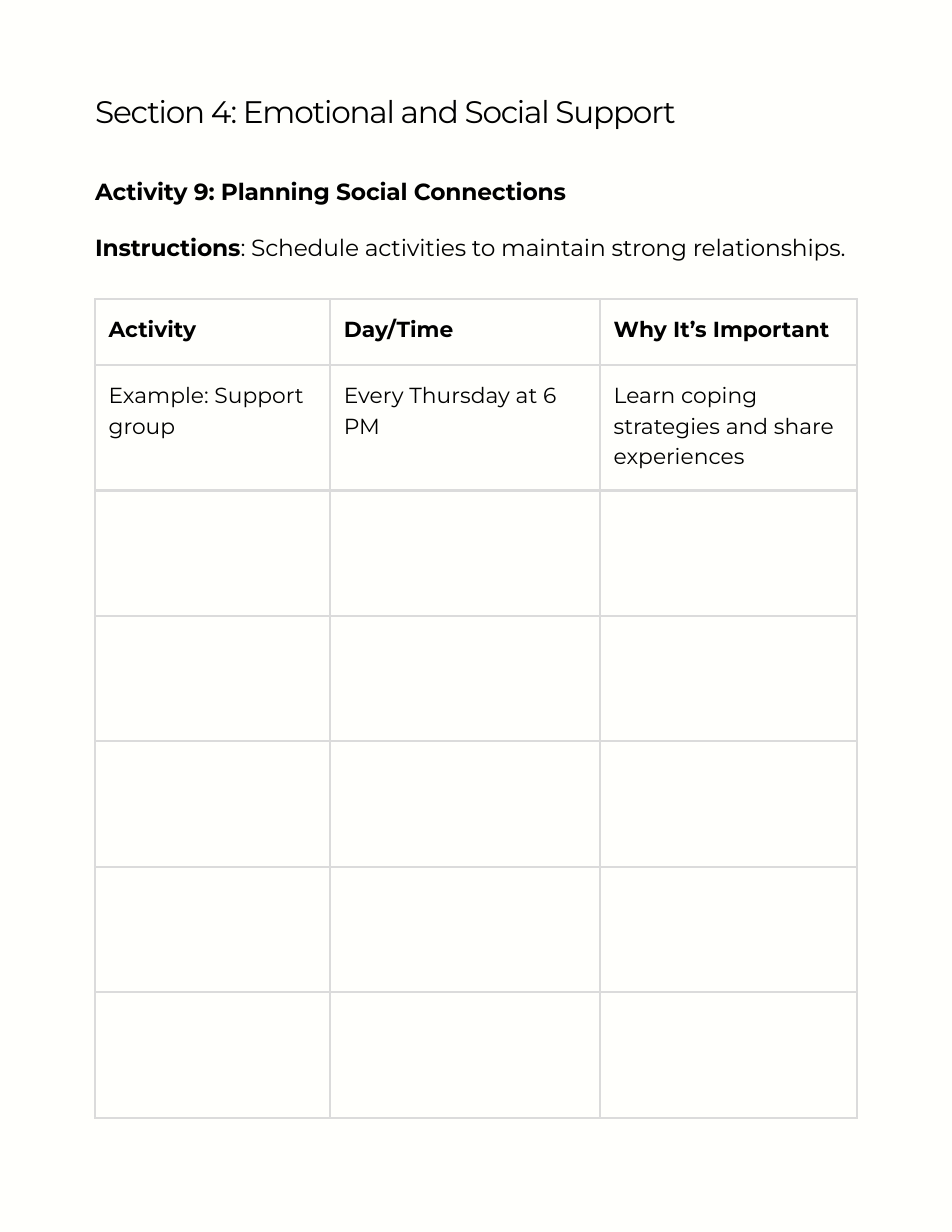
from dataclasses import dataclass

from lxml.etree import SubElement
from pptx import Presentation
from pptx.dml.color import RGBColor
from pptx.enum.text import MSO_ANCHOR as Anchor, MSO_AUTO_SIZE as AutoSize, PP_ALIGN as Align
from pptx.oxml.ns import qn
from pptx.util import Inches, Pt


@dataclass(frozen=True)
class Theme:
    font: str = "Montserrat"
    ink: str = "000000"
    paper: str = "FFFFFC"
    rule: str = "DBDBDB"
    rule_width: float = 1.5
    title_size: float = 20
    body_size: float = 15
    table_size: float = 14
    text_leading: float = 18
    table_leading: float = 19.6


THEME = Theme()
LEFT, WIDTH = 0.85, 6.8
COLUMNS = [2.1, 2.41, 2.29]
HEADER_HEIGHT, ROW_HEIGHT, EMPTY_ROWS = 0.59, 1.12, 5
CELL_MARGIN = 0.12
ROWS = [
    ["Activity", "Day/Time", "Why It’s Important"],
    [
        "Example: Support group",
        "Every Thursday at 6 PM",
        "Learn coping strategies and share experiences",
    ],
]


def set_all(target, values):
    for name, value in values.items():
        setattr(target, name, value)


def write(para, parts, size, leading, spacing=0, before=0):
    set_all(para, {
        "alignment": Align.LEFT,
        "line_spacing": Pt(leading),
        "space_before": Pt(before),
        "space_after": Pt(0),
    })
    for text, bold in parts:
        span = para.add_run()
        span.text = text
        set_all(span.font, {"name": THEME.font, "size": Pt(size), "bold": bold})
        span.font.color.rgb = RGBColor.from_string(THEME.ink)
        if spacing:
            span._r.get_or_add_rPr().set("spc", str(round(spacing * 100)))


def frame_format(margin):
    sides = ("left", "top", "right", "bottom")
    return {f"margin_{side}": Inches(margin) for side in sides} | {
        "vertical_anchor": Anchor.TOP,
    }


def prepare_frame(shape):
    frame = shape.text_frame
    set_all(frame, frame_format(0) | {"word_wrap": True, "auto_size": AutoSize.NONE})
    return frame


def place_title(slide, left, top, width, height):
    title = slide.shapes.title
    set_all(title, {
        "left": Inches(left), "top": Inches(top),
        "width": Inches(width), "height": Inches(height),
    })
    para = prepare_frame(title).paragraphs[0]
    write(para, [("Section 4: Emotional and Social Support", False)],
          THEME.title_size, THEME.text_leading, spacing=-0.8)


def place_instructions(slide, left, top, width, height):
    box = slide.shapes.add_textbox(*map(Inches, (left, top, width, height)))
    frame = prepare_frame(box)
    heading = [("Activity 9: Planning Social Connections", True)]
    instructions = [
        ("Instructions", True),
        (": Schedule activities to maintain strong relationships.", False),
    ]
    write(frame.paragraphs[0], heading, THEME.body_size, THEME.text_leading, -0.1)
    write(frame.add_paragraph(), instructions, THEME.body_size, THEME.text_leading,
          -0.1, before=THEME.text_leading)


def draw_borders(cell):
    properties = cell._tc.get_or_add_tcPr()
    for position, edge in enumerate(("lnL", "lnR", "lnT", "lnB")):
        line = SubElement(properties, qn(f"a:{edge}"), w=str(Pt(THEME.rule_width)))
        fill = SubElement(line, qn("a:solidFill"))
        SubElement(fill, qn("a:srgbClr"), val=THEME.rule)
        properties.insert(position, line)


def place_planner(slide, left, top, width, height):
    row_heights = [HEADER_HEIGHT] + [ROW_HEIGHT] * (EMPTY_ROWS + 1)
    table = slide.shapes.add_table(
        len(row_heights), len(COLUMNS), *map(Inches, (left, top, width, height))
    ).table
    set_all(table, {"first_row": False, "horz_banding": False})
    for column, column_width in zip(table.columns, COLUMNS):
        column.width = Inches(column_width)
    for row, row_height in zip(table.rows, row_heights):
        row.height = Inches(row_height)
    for cell in table.iter_cells():
        set_all(cell, frame_format(CELL_MARGIN))
        cell.fill.background()
        draw_borders(cell)
    for row_index, texts in enumerate(ROWS):
        for column_index, text in enumerate(texts):
            para = table.cell(row_index, column_index).text_frame.paragraphs[0]
            write(para, [(text, row_index == 0)], THEME.table_size, THEME.table_leading)


def main():
    deck = Presentation()
    set_all(deck, {"slide_width": Inches(8.5), "slide_height": Inches(11)})
    page = deck.slides.add_slide(deck.slide_layouts.get_by_name("Title Only"))
    page.background.fill.solid()
    page.background.fill.fore_color.rgb = RGBColor.from_string(THEME.paper)
    place_title(page, LEFT, 0.91, WIDTH, 0.27)
    place_instructions(page, LEFT, 1.58, WIDTH, 0.7)
    place_planner(page, LEFT, 2.67, WIDTH, 7.29)
    deck.save("out.pptx")


if __name__ == "__main__":
    main()
